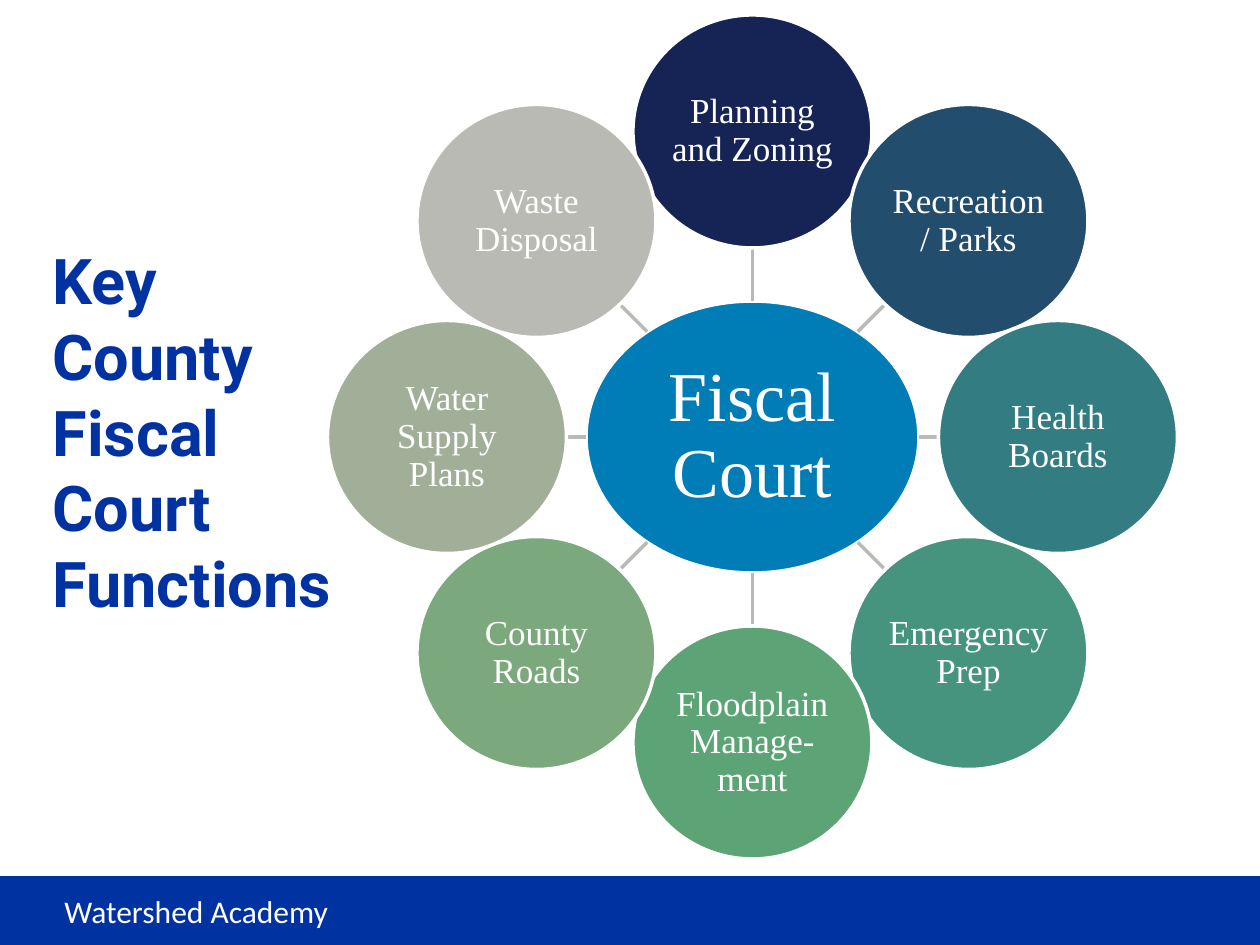
from math import cos, hypot, radians, sin

from lxml.etree import SubElement
from pptx import Presentation
from pptx.dml.color import RGBColor
from pptx.enum.shapes import MSO_CONNECTOR as Connector, MSO_SHAPE as Shape
from pptx.enum.text import MSO_ANCHOR as Anchor, MSO_AUTO_SIZE as AutoSize, PP_ALIGN as Align
from pptx.oxml.ns import qn
from pptx.util import Pt

PX = 914400 // 126
COLORS = {
    "white": "FFFFFF",
    "title": "0032A1",
    "bar": "0033A1",
    "hub": "007CB7",
    "spoke": "B8BAB3",
}
FUNCTIONS = [
    ("Planning and Zoning", "162355"),
    ("Recreation / Parks", "234D6D"),
    ("Health Boards", "337C82"),
    ("Emergency Prep", "46947E"),
    ("Floodplain Manage-ment", "5CA375"),
    ("County Roads", "7BA87C"),
    ("Water Supply Plans", "A1AF99"),
    ("Waste Disposal", "B8BAB3"),
]
HUB_SIZE = (333, 272)
FUNCTION_SIZE = (239, 233)


def px(*lengths):
    """Turn pixel lengths into EMU."""
    return [round(length * PX) for length in lengths]


def rgb(value):
    """Make a colour from a hex string."""
    return RGBColor.from_string(value)


def write(frame, text, font, size, color=COLORS["white"], bold=False,
          align=Align.LEFT, anchor=Anchor.MIDDLE, spacing=None, inset=None):
    """Fill a text frame with one formatted paragraph."""
    frame.word_wrap = True
    frame.auto_size = AutoSize.NONE
    frame.vertical_anchor = anchor
    if inset is not None:
        frame.margin_left = frame.margin_right = px(inset)[0]
        frame.margin_top = frame.margin_bottom = px(inset)[0]
    paragraph = frame.paragraphs[0]
    paragraph.text = text
    paragraph.alignment = align
    paragraph.line_spacing = spacing
    for run in paragraph.runs:
        run.font.name = font
        run.font.size = Pt(size)
        run.font.bold = bold
        run.font.color.rgb = rgb(color)


def add_filled(slide, preset, box, fill, line, width):
    """Add a preset shape with a plain fill and outline."""
    shape = slide.shapes.add_shape(preset, *px(*box))
    shape.shadow.inherit = False
    shape.fill.solid()
    shape.fill.fore_color.rgb = rgb(fill)
    shape.line.color.rgb = rgb(line)
    shape.line.width = Pt(width)
    return shape


def add_circle(slide, center, size, text, fill, font_size, inset):
    """Add a labelled ellipse around a centre point."""
    (x, y), (width, height) = center, size
    box = (x - width / 2, y - height / 2, width, height)
    circle = add_filled(slide, Shape.OVAL, box, fill, COLORS["white"], 2)
    write(circle.text_frame, text, "Times New Roman", font_size,
          align=Align.CENTER, spacing=0.9, inset=inset)


def reach(size, angle):
    """Return the distance from an ellipse's centre to its edge."""
    a, b = size[0] / 2, size[1] / 2
    return a * b / hypot(b * cos(angle), a * sin(angle))


def add_spoke(slide, start, end):
    """Draw a straight line from the hub to a function."""
    spoke = slide.shapes.add_connector(Connector.STRAIGHT, *px(*start, *end))
    spoke.line.color.rgb = rgb(COLORS["spoke"])
    spoke.line.width = Pt(2)
    SubElement(spoke._element.spPr, qn("a:effectLst"))


def add_wheel(slide, left, top, width, height):
    """Place the hub and its ring of functions inside a box."""
    center_x, center_y = left + width / 2, top + height / 2
    radius = (height - FUNCTION_SIZE[1]) / 2

    def on_ray(angle, distance):
        """Return a point on a ray from the hub's centre."""
        return center_x + distance * cos(angle), center_y + distance * sin(angle)

    add_circle(slide, (center_x, center_y), HUB_SIZE, "Fiscal Court", COLORS["hub"], 40, 4)
    for index, (function, fill) in enumerate(FUNCTIONS):
        angle = radians(index * 360 / len(FUNCTIONS) - 90)
        add_spoke(slide, on_ray(angle, reach(HUB_SIZE, angle)),
                  on_ray(angle, radius - reach(FUNCTION_SIZE, angle)))
        add_circle(slide, on_ray(angle, radius), FUNCTION_SIZE, function, fill, 20, 1)


def add_title(slide, left, top, width, height):
    """Move and format the title placeholder."""
    title = slide.shapes.title
    title.left, title.top, title.width, title.height = px(left, top, width, height)
    write(title.text_frame, "Key County\vFiscal\vCourt\vFunctions", "Roboto", 36,
          color=COLORS["title"], bold=True)


def add_footer(slide, left, top, width, height):
    """Add the bottom bar and the name on it."""
    add_filled(slide, Shape.RECTANGLE, (left, top, width, height),
               COLORS["bar"], COLORS["title"], 0.75)
    name = slide.shapes.add_textbox(*px(left + 52, top + 9, 423, 51))
    write(name.text_frame, "Watershed Academy", "Calibri", 18, anchor=Anchor.TOP)


def main():
    """Build and save the slide."""
    deck = Presentation()
    deck.slide_width, deck.slide_height = px(1260, 945)
    slide = deck.slides.add_slide(deck.slide_layouts[5])
    add_footer(slide, 0, 877, 1260, 67)
    add_wheel(slide, 327, 15, 851, 844)
    add_title(slide, 40, 0, 314, 862)
    deck.save("out.pptx")


if __name__ == "__main__":
    main()
